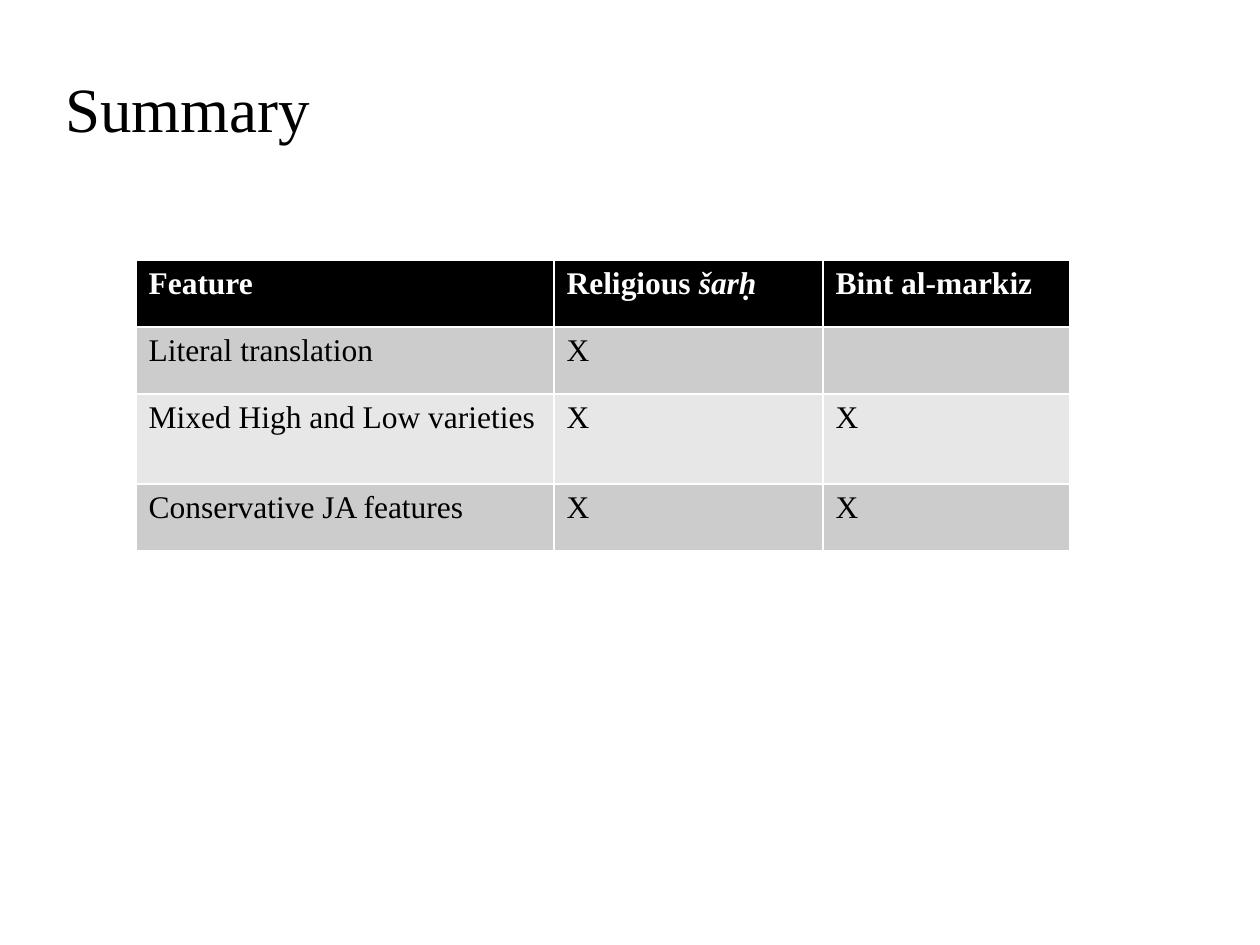
from pptx import Presentation
from pptx.dml.color import RGBColor as Color
from pptx.enum.text import MSO_AUTO_SIZE as AutoSize
from pptx.util import Emu, Pt

THEME = {
    "font": "Times New Roman",
    "title_size": Pt(36),
    "table_size": Pt(18),
    "ink": Color.from_string("000000"),
    "header_ink": Color.from_string("FFFFFF"),
    "header_fill": Color.from_string("000000"),
    "bands": [Color.from_string("E7E7E7"), Color.from_string("CCCCCC")],
}
EMU_PER_PX = 914400 / 126


def px(length):
    return Emu(round(length * EMU_PER_PX))


def add_run(paragraph, text, color, **formats):
    run = paragraph.add_run()
    run.text = text
    run.font.color.rgb = color
    for name, value in {"name": THEME["font"], **formats}.items():
        setattr(run.font, name, value)


presentation = Presentation()
presentation.slide_width = px(1260)
presentation.slide_height = px(945)
slide = presentation.slides.add_slide(presentation.slide_layouts[6])

title = slide.shapes.add_textbox(px(53), px(63), px(1042), px(89))
title.text_frame.word_wrap = True
title.text_frame.auto_size = AutoSize.SHAPE_TO_FIT_TEXT
add_run(title.text_frame.paragraphs[0], "Summary", THEME["ink"], size=THEME["title_size"])

column_widths = [418, 269, 247]
row_heights = [67, 67, 90, 67]
features = [
    [["Feature"], ["Religious ", "šarḥ"], ["Bint al-markiz"]],
    [["Literal translation"], ["X"], []],
    [["Mixed High and Low varieties"], ["X"], ["X"]],
    [["Conservative JA features"], ["X"], ["X"]],
]

table = slide.shapes.add_table(
    len(row_heights), len(column_widths),
    px(136), px(260), px(sum(column_widths)), px(sum(row_heights)),
).table
for column, width in zip(table.columns, column_widths):
    column.width = px(width)

for row_index, (row, height, contents) in enumerate(zip(table.rows, row_heights, features)):
    row.height = px(height)
    is_header = row_index == 0
    fill = THEME["header_fill"] if is_header else THEME["bands"][row_index % 2]
    ink = THEME["header_ink"] if is_header else THEME["ink"]
    for cell, pieces in zip(row.cells, contents):
        cell.fill.solid()
        cell.fill.fore_color.rgb = fill
        for piece in pieces:
            add_run(cell.text_frame.paragraphs[0], piece, ink,
                    size=THEME["table_size"], bold=is_header, italic=piece == "šarḥ")

presentation.save("out.pptx")
